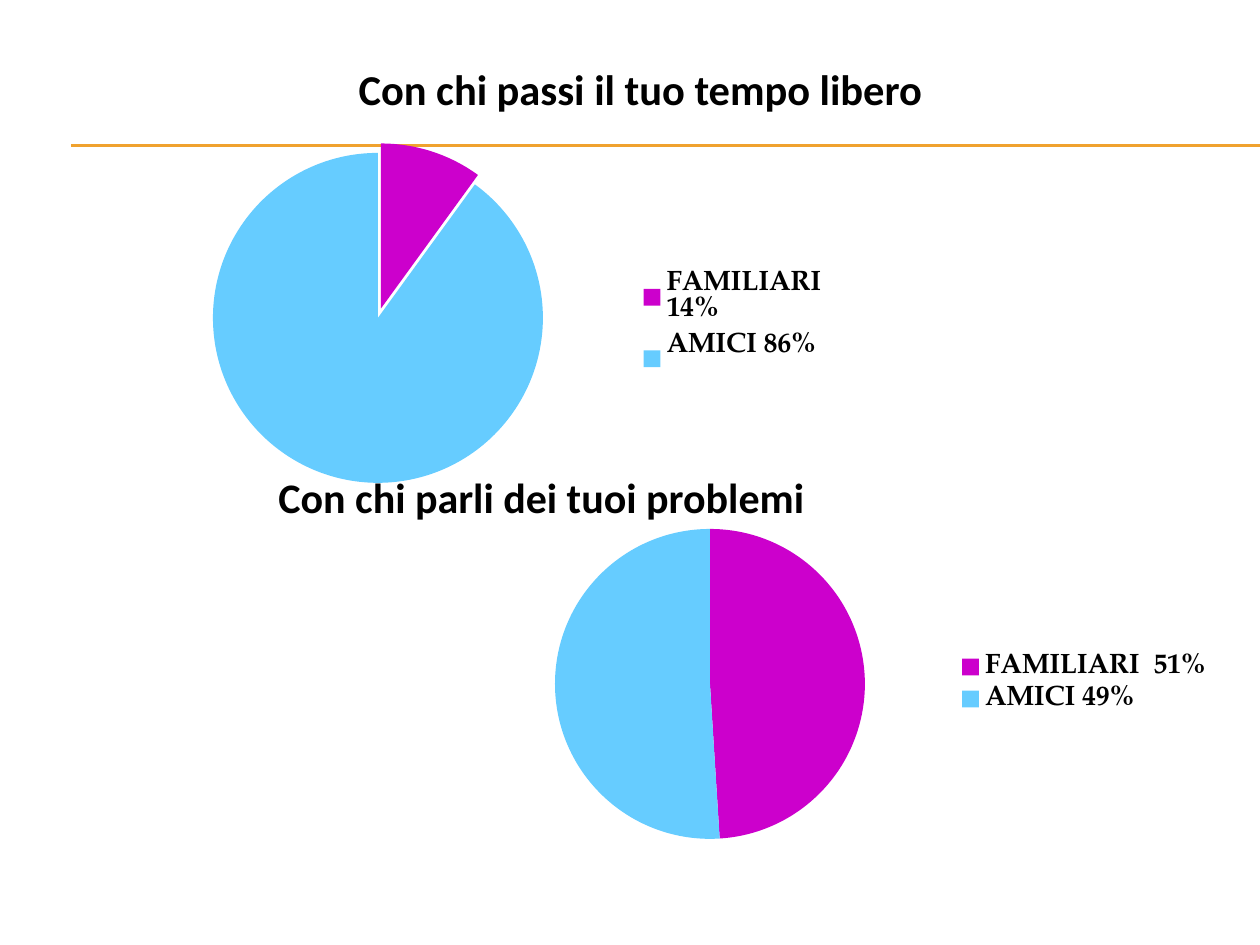
from lxml import etree
from pptx import Presentation
from pptx.chart.data import CategoryChartData
from pptx.dml.color import RGBColor
from pptx.enum.chart import XL_CHART_TYPE, XL_LEGEND_POSITION
from pptx.enum.shapes import MSO_CONNECTOR
from pptx.enum.text import MSO_ANCHOR, PP_ALIGN
from pptx.oxml.ns import qn
from pptx.util import Pt

PIE = XL_CHART_TYPE.PIE
RIGHT = XL_LEGEND_POSITION.RIGHT
LINE = MSO_CONNECTOR.STRAIGHT
TOP, MIDDLE = MSO_ANCHOR.TOP, MSO_ANCHOR.MIDDLE
LEFT, CENTER = PP_ALIGN.LEFT, PP_ALIGN.CENTER

PX = 914400 // 126
COLORS = {"family": "CC00CC", "friends": "66CCFF", "rule": "F0A22E", "text": "000000"}
HEAD, BODY = "Calibri", "TeX Gyre Pagella"


class Deck:
    def __init__(self, wide, high):
        self.prs = Presentation()
        self.prs.slide_width, self.prs.slide_height = wide * PX, high * PX
        self.slide = self.prs.slides.add_slide(self.prs.slide_layouts[6])

    def color(self, name):
        return RGBColor.from_string(COLORS[name])

    def font(self, font, face, size, bold):
        font.name, font.size, font.bold = face, Pt(size), bold
        font.color.rgb = self.color("text")

    def rule(self, left, right, y):
        line = self.slide.shapes.add_connector(LINE, left * PX, y * PX, right * PX, y * PX)
        line.line.color.rgb = self.color("rule")
        line.line.width = Pt(0.75)
        etree.SubElement(line._element.spPr, qn("a:effectLst"))

    def text(self, words, box, size, align, anchor):
        frame = self.slide.shapes.add_textbox(*(n * PX for n in box)).text_frame
        frame.word_wrap = True
        frame.vertical_anchor = anchor
        frame.margin_top = frame.margin_bottom = 0
        para = frame.paragraphs[0]
        para.alignment = align
        run = para.add_run()
        run.text = words
        self.font(run.font, HEAD, size, True)

    def place(self, node, index, box, frame, inner=False):
        for old in node.findall(qn("c:layout")):
            node.remove(old)
        layout = etree.Element(qn("c:layout"))
        manual = etree.SubElement(layout, qn("c:manualLayout"))
        left, top, wide, high = frame
        x, y, w, h = box
        parts = {"layoutTarget": "inner"} if inner else {}
        parts |= {"xMode": "edge", "yMode": "edge", "x": (x - left) / wide,
                  "y": (y - top) / high, "w": w / wide, "h": h / high}
        for tag, val in parts.items():
            etree.SubElement(manual, qn(f"c:{tag}")).set("val", str(val))
        node.insert(index, layout)

    def pie(self, frame, plot, key, names, values, burst=0):
        data = CategoryChartData()
        data.categories = names
        data.add_series("Series 1", values)
        chart = self.slide.shapes.add_chart(PIE, *(n * PX for n in frame), data).chart
        self.font(chart.font, BODY, 18, False)
        chart.has_title = False
        chart.has_legend = True
        chart.legend.position = RIGHT
        chart.legend.include_in_layout = True
        self.font(chart.legend.font, BODY, 16, True)
        chart.plots[0].vary_by_categories = True
        points = chart.plots[0].series[0].points
        for i, name in enumerate(("family", "friends")):
            fill = points[i].format.fill
            fill.solid()
            fill.fore_color.rgb = self.color(name)
            points[i].format.line.fill.background()
        if burst:
            part = etree.Element(qn("c:explosion"), val=str(burst))
            points[0].format._element.find(qn("c:spPr")).addprevious(part)
        area = chart._chartSpace.chart.plotArea
        self.place(area, 0, plot, frame, True)
        self.place(chart.legend._element, 1, key, frame)


def main():
    deck = Deck(1260, 945)
    for y in (145, 146):
        deck.rule(71, 1260, y)
    deck.text("Con chi passi il tuo tempo libero", (42, 63, 1197, 116), 24.3, CENTER, TOP)
    deck.pie((128, 128, 718, 364), (213, 153, 330, 330), (636, 262, 200, 106),
             ["FAMILIARI  14%", "AMICI 86%"], [10, 90], 6)
    deck.text("Con chi parli dei tuoi problemi", (266, 427, 906, 140), 24, LEFT, MIDDLE)
    deck.pie((472, 512, 748, 344), (555, 529, 310, 310), (952, 648, 264, 70),
             ["FAMILIARI  51%", "AMICI 49%"], [49, 51])
    deck.prs.save("out.pptx")


if __name__ == "__main__":
    main()
